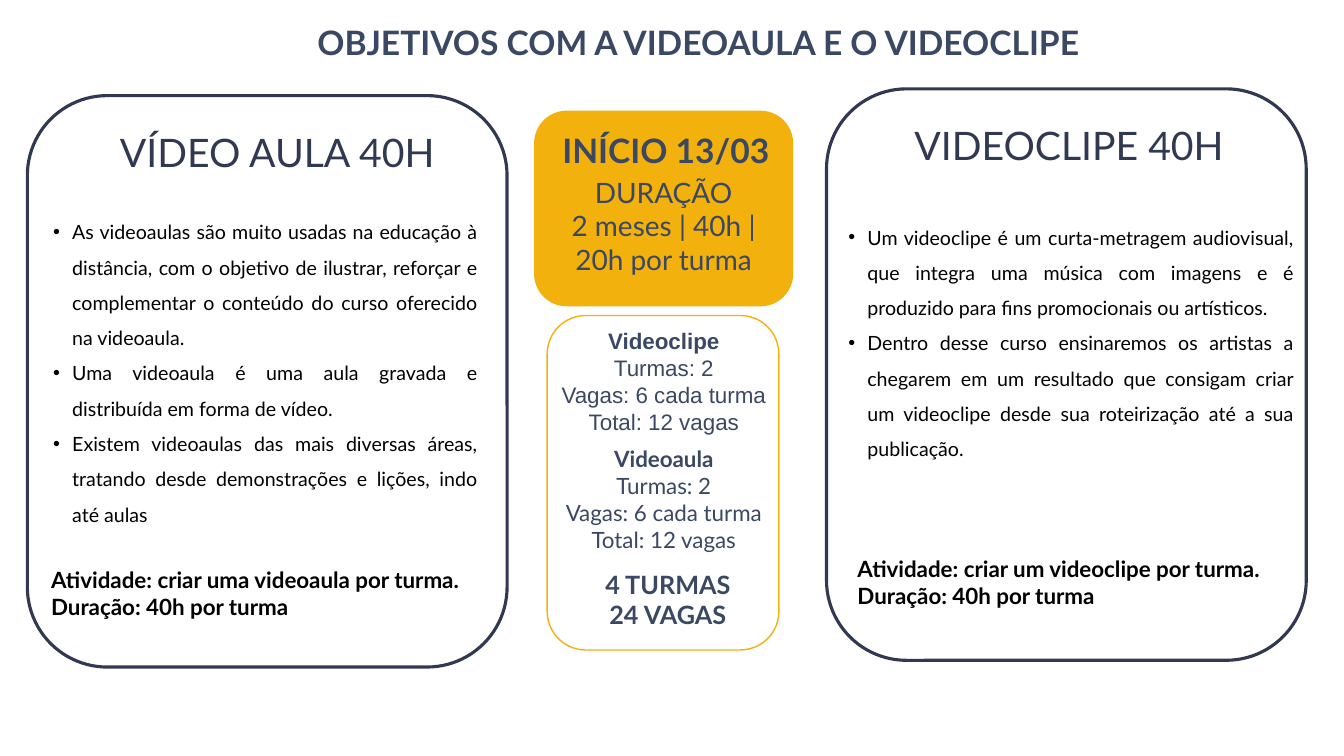
from lxml.etree import SubElement
from pptx import Presentation
from pptx.dml.color import RGBColor
from pptx.enum.shapes import MSO_SHAPE
from pptx.enum.text import MSO_ANCHOR, MSO_AUTO_SIZE, PP_ALIGN
from pptx.oxml.ns import qn
from pptx.util import Cm, Pt

NAVY = RGBColor(0x30, 0x39, 0x51)
SLATE = RGBColor(0x3A, 0x48, 0x63)
AMBER = RGBColor(0xF3, 0xB1, 0x0D)
BLACK = RGBColor(0x00, 0x00, 0x00)

deck = Presentation()
deck.slide_width, deck.slide_height = Cm(33.87), Cm(19.05)
page = deck.slides.add_slide(deck.slide_layouts[5])


def add_card(left, top, width, height, fill=None, line=None, weight=1):
    card = page.shapes.add_shape(
        MSO_SHAPE.ROUNDED_RECTANGLE, Cm(left), Cm(top), Cm(width), Cm(height))
    card.shadow.inherit = False
    if fill is None:
        card.fill.background()
    else:
        card.fill.solid()
        card.fill.fore_color.rgb = fill
    if line is None:
        card.line.fill.background()
    else:
        card.line.color.rgb = line
        card.line.width = Pt(weight)


def write(place, lines, size, color, bold=False, align=PP_ALIGN.CENTER,
          font="Lato", bullets=False, bold_first=False, box=None):
    """Write one paragraph per line, in a new text box unless one is given."""
    left, top, width, height = (Cm(length) for length in place)
    if box is None:
        box = page.shapes.add_textbox(left, top, width, height)
    box.left, box.top, box.width, box.height = left, top, width, height
    frame = box.text_frame
    frame.word_wrap = True
    frame.auto_size = MSO_AUTO_SIZE.SHAPE_TO_FIT_TEXT
    frame.vertical_anchor = MSO_ANCHOR.TOP
    for number, line in enumerate(lines):
        para = frame.add_paragraph() if number else frame.paragraphs[0]
        para.alignment = align
        if bullets:
            para.line_spacing = 1.5
            properties = para._p.get_or_add_pPr()
            properties.set("marL", str(Cm(0.48)))
            properties.set("indent", str(-Cm(0.48)))
            SubElement(properties, qn("a:buFont")).set("typeface", "Arial")
            SubElement(properties, qn("a:buChar")).set("char", "•")
        span = para.add_run()
        span.text = line
        span.font.name = font
        span.font.size = Pt(size)
        span.font.bold = bold or (bold_first and number == 0)
        span.font.color.rgb = color


# Title
title = page.shapes.title
frame = title.text_frame
frame.margin_left = frame.margin_right = Cm(0.08)
frame.margin_top = frame.margin_bottom = Cm(0.08)
write((6.76, 0.48, 21.67, 1.17), ["OBJETIVOS COM A VIDEOAULA E O VIDEOCLIPE"],
      24, SLATE, bold=True, box=title)

# Course cards: corner, heading, bullets and activity
courses = [
    ((0.69, 2.41),
     (0, 3.1, 13.97, 1.45), "VÍDEO AULA 40H",
     (1.09, 5.13, 11.2, 8.33),
     ["As videoaulas são muito usadas na educação à distância, com o objetivo "
      "de ilustrar, reforçar e complementar o conteúdo do curso oferecido na "
      "videoaula.",
      "Uma videoaula é uma aula gravada e distribuída em forma de vídeo.",
      "Existem videoaulas das mais diversas áreas, tratando desde "
      "demonstrações e lições, indo até aulas"],
     (1.04, 14.15, 13.67, 1.63), "Atividade: criar uma videoaula por turma."),
    ((20.83, 2.24),
     (20.02, 2.92, 13.84, 1.45), "VIDEOCLIPE 40H",
     (21.13, 5.26, 11.73, 6.53),
     ["Um videoclipe é um curta-metragem audiovisual, que integra uma música "
      "com imagens e é produzido para fins promocionais ou artísticos.",
      "Dentro desse curso ensinaremos os artistas a chegarem em um resultado "
      "que consigam criar um videoclipe desde sua roteirização até a sua "
      "publicação."],
     (21.36, 13.87, 12.45, 1.63), "Atividade: criar um videoclipe por turma."),
]
for corner, heading_place, heading, list_place, points, task_place, task in courses:
    add_card(*corner, 12.09, 14.4, line=NAVY, weight=2.25)
    write(heading_place, [heading], 28, NAVY)
    write(list_place, points, 14, BLACK, align=PP_ALIGN.JUSTIFY, bullets=True)
    write(task_place, [task, "Duração: 40h por turma"], 16, BLACK,
          bold=True, align=PP_ALIGN.LEFT)

# Start date and duration
add_card(13.46, 2.79, 6.53, 4.93, fill=AMBER)
write((8.31, 3.15, 16.94, 1.27), ["INÍCIO 13/03"], 24, SLATE, bold=True)
write((14.02, 4.29, 5.41, 2.82), ["DURAÇÃO", "2 meses | 40h | 20h por turma"],
      20, SLATE)

# Classes and places
add_card(13.79, 7.95, 5.84, 8.43, line=AMBER)
for course, top, font in [("Videoclipe", 8.13, "Arial"),
                          ("Videoaula", 11.1, "Lato")]:
    write((8.26, top, 16.94, 3),
          [course, "Turmas: 2", "Vagas: 6 cada turma", "Total: 12 vagas"],
          16, SLATE, font=font, bold_first=True)
write((8.36, 14.22, 16.94, 1.8), ["4 TURMAS", "24 VAGAS"], 18, SLATE, bold=True)

deck.save("out.pptx")
